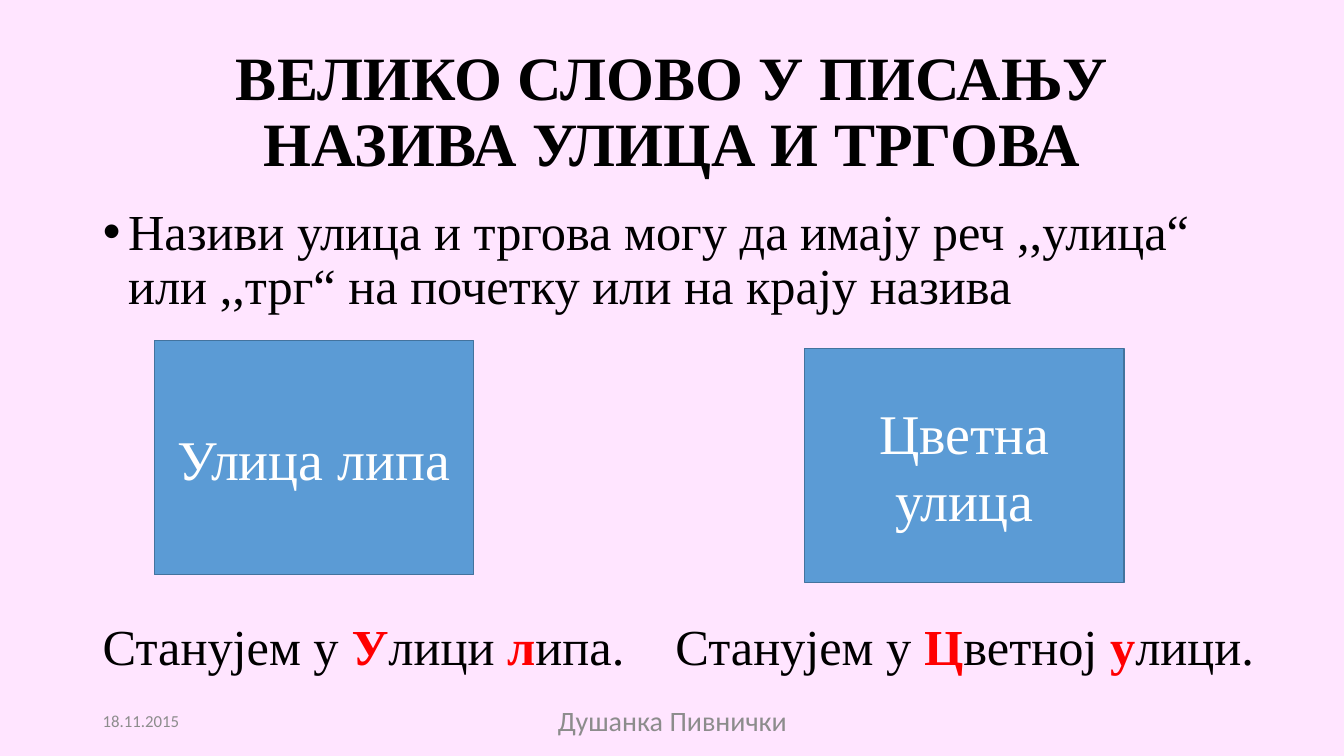
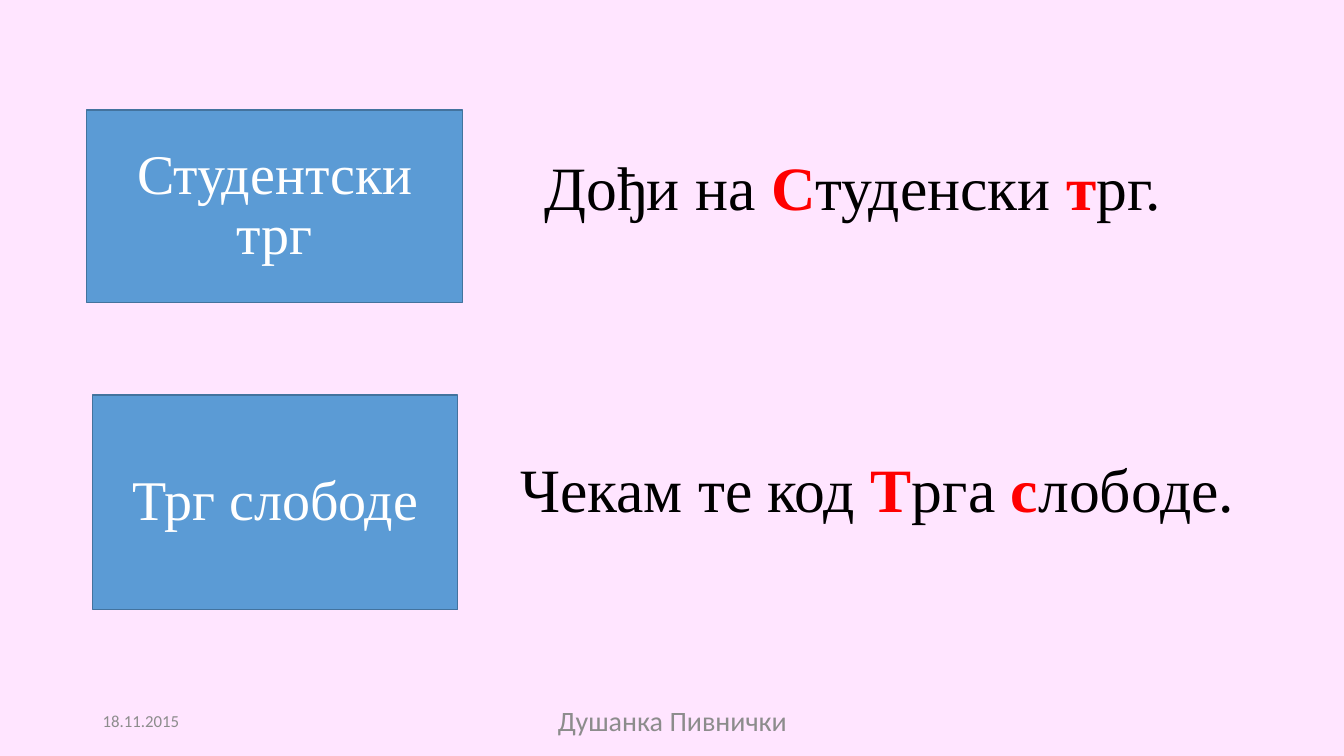
from pptx import Presentation
from pptx.dml.color import RGBColor
from pptx.enum.shapes import MSO_SHAPE
from pptx.enum.text import MSO_ANCHOR, MSO_AUTO_SIZE, PP_ALIGN
from pptx.oxml.ns import qn
from pptx.util import Inches, Pt

LEFT, CENTER = PP_ALIGN.LEFT, PP_ALIGN.CENTER
TOP, MIDDLE = MSO_ANCHOR.TOP, MSO_ANCHOR.MIDDLE
SERIF, SANS = "Times New Roman", "Calibri"
COLORS = {
    "background": "FFE5FF", "text": "000000", "accent": "FF0000",
    "box": "5B9BD5", "border": "43739E", "white": "FFFFFF", "footer": "8C8C8C",
}


def rgb(name):
    return RGBColor.from_string(COLORS[name])


def write(sp, box, text, size, color="text", font=SERIF, bold=False,
          align=LEFT, anchor=TOP, wrap=True, spacing=1.0, before=0, indent=0, card=False):
    """Place sp and fill it with text; parts between asterisks are bold and red."""
    sp.left, sp.top, sp.width, sp.height = map(Inches, box)
    if card:
        sp.fill.solid()
        sp.fill.fore_color.rgb = rgb("box")
        sp.line.color.rgb = rgb("border")
        sp.line.width = Pt(1)
    tf = sp.text_frame
    for name, value in {"word_wrap": wrap, "vertical_anchor": anchor,
                        "auto_size": MSO_AUTO_SIZE.NONE}.items():
        setattr(tf, name, value)
    p = tf.paragraphs[0]
    for name, value in {"alignment": align, "line_spacing": spacing,
                        "space_before": Pt(before)}.items():
        setattr(p, name, value)
    pPr = p._p.get_or_add_pPr()
    pPr.set("marL", str(Inches(indent)))
    pPr.set("indent", str(-Inches(indent)))
    if not indent:
        pPr.append(pPr.makeelement(qn("a:buNone"), {}))
    for i, part in enumerate(text.split("*")):
        marked = i % 2 == 1
        r = p.add_run()
        r.text = part
        for name, value in {"name": font, "size": Pt(size), "bold": bold or marked}.items():
            setattr(r.font, name, value)
        r.font.color.rgb = rgb("accent" if marked else color)


prs = Presentation()
prs.slide_width, prs.slide_height = Inches(13.33), Inches(7.5)
fill = prs.slide_master.background.fill
fill.solid()
fill.fore_color.rgb = rgb("background")

CARD = {"size": 40, "color": "white", "align": CENTER, "anchor": MIDDLE, "card": True}
FOOTER = [
    ((0.92, 6.95, 3, 0.4), "18.11.2015", 12, LEFT),
    ((4.42, 6.95, 4.5, 0.4), "Душанка Пивнички", 20, CENTER),
]

slides = [prs.slides.add_slide(prs.slide_layouts[1]) for _ in range(2)]
for s in slides:
    for box, text, size, align in FOOTER:
        write(s.shapes.add_textbox(0, 0, 0, 0), box, text, size, "footer", SANS,
              align=align, anchor=MIDDLE)

# Slide 1: the rule, with two street names
s = slides[0]
write(s.shapes.title, (0.92, 0.4, 11.5, 1.45), "ВЕЛИКО СЛОВО У ПИСАЊУ НАЗИВА УЛИЦА И ТРГОВА",
      44, bold=True, align=CENTER, anchor=MIDDLE, spacing=0.9)
write(s.placeholders[1], (0.92, 2, 11.5, 4.76),
      "Називи улица и тргова могу да имају реч ,,улица“ или ,,трг“ на почетку или на крају назива",
      36, spacing=0.9, before=10, indent=0.25)
for x, y, name in [(1.53, 3.38, "Улица липа"), (7.98, 3.46, "Цветна улица")]:
    sp = s.shapes.add_shape(MSO_SHAPE.RECTANGLE, 0, 0, 0, 0)
    sp.shadow.inherit = False
    write(sp, (x, y, 3.17, 2.32), name, **CARD)

# Slide 2: two squares, named in the placeholders
s = slides[1]
write(s.shapes.title, (0.86, 1.09, 3.73, 1.91), "Студентски трг", spacing=0.9, **CARD)
write(s.placeholders[1], (0.92, 3.92, 3.62, 2.13), "Трг слободе", spacing=0.9, **CARD)

SENTENCES = [
    (slides[0], (0.92, 6.05, 5.37, 0.71), "Станујем у *У*лици *л*ипа.", 36),
    (slides[0], (6.6, 6.05, 5.92, 0.71), "Станујем у *Ц*ветној *у*лици.", 36),
    (slides[1], (5.3, 1.43, 6.52, 0.84), "Дођи на *С*туденски *т*рг.", 44),
    (slides[1], (5.06, 4.42, 7.35, 0.84), "Чекам те код *Т*рга *с*лободе.", 44),
]
for s, box, text, size in SENTENCES:
    write(s.shapes.add_textbox(0, 0, 0, 0), box, text, size, wrap=False)

prs.save("out.pptx")
